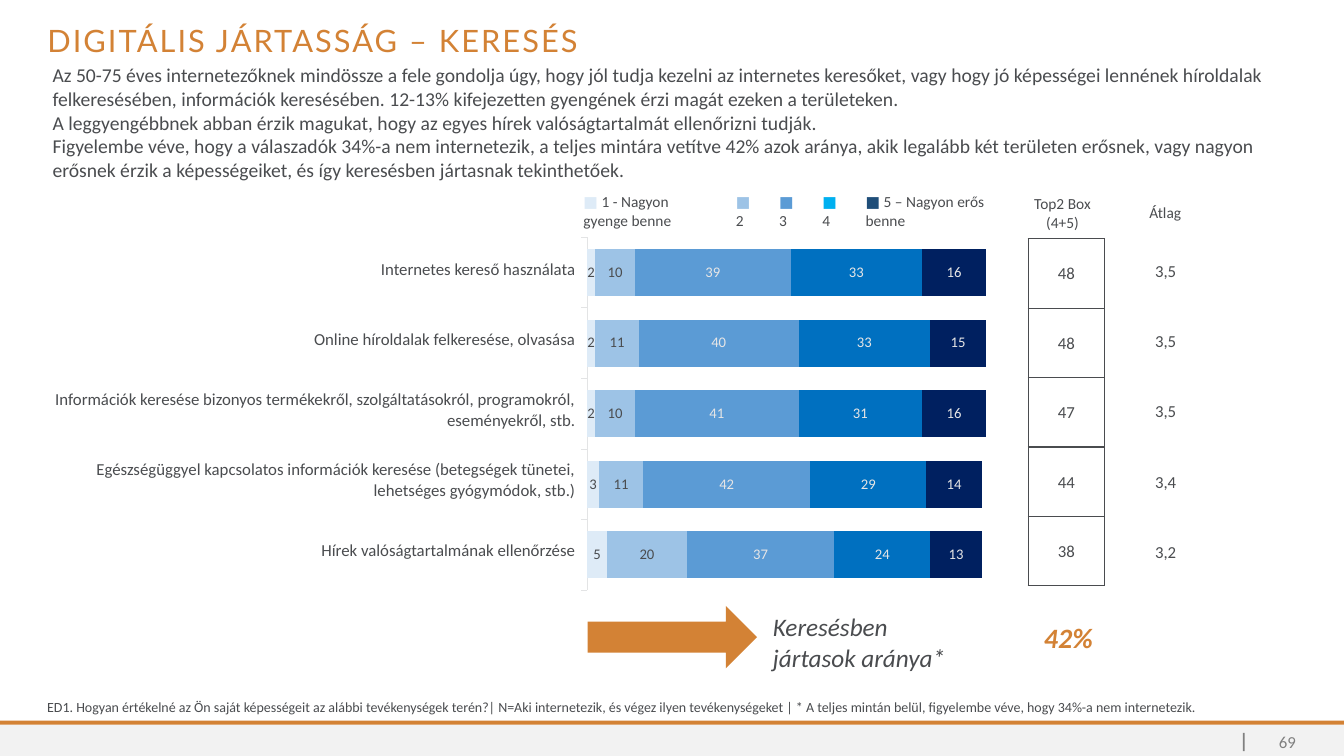
from lxml.etree import SubElement
from pptx import Presentation
from pptx.chart.data import CategoryChartData
from pptx.dml.color import RGBColor
from pptx.enum.chart import XL_CHART_TYPE, XL_TICK_LABEL_POSITION, XL_TICK_MARK
from pptx.enum.shapes import MSO_SHAPE
from pptx.enum.text import MSO_ANCHOR, MSO_AUTO_SIZE, PP_ALIGN
from pptx.oxml.ns import qn
from pptx.util import Cm, Pt

LEFT, CENTER, RIGHT = PP_ALIGN.LEFT, PP_ALIGN.CENTER, PP_ALIGN.RIGHT
TOP, MIDDLE = MSO_ANCHOR.TOP, MSO_ANCHOR.MIDDLE
NO_FIT = MSO_AUTO_SIZE.NONE
RECTANGLE, RIGHT_ARROW = MSO_SHAPE.RECTANGLE, MSO_SHAPE.RIGHT_ARROW
BAR_STACKED = XL_CHART_TYPE.BAR_STACKED
NO_LABELS = XL_TICK_LABEL_POSITION.NONE
TICK_OUTSIDE, TICK_NONE = XL_TICK_MARK.OUTSIDE, XL_TICK_MARK.NONE

COLORS = {
    "ink": "4A4C4F", "accent": "D38235", "footer": "F2F2F2", "muted": "808080",
    "axis": "E3E4E5", "light": "E7E6E6",
    "bar1": "DEEBF7", "bar2": "9DC3E6", "bar3": "5B9BD5", "bar4": "0070C0", "bar5": "002060",
    "legend4": "00B0F0", "legend5": "1F4E79",
}


def rgb(name):
    return RGBColor.from_string(COLORS[name])


def write(frame, text, size=12, color="ink", font="Calibri", align=LEFT, bold=False,
          italic=False, tracking=None, line=1.0, square=None):
    for index, content in enumerate(text.split("\n")):
        paragraph = frame.add_paragraph() if index else frame.paragraphs[0]
        paragraph.alignment = align
        paragraph.line_spacing = line
        paragraph.space_before = Pt(0)
        pieces = [(content, color, bold)]
        if square:
            pieces.insert(0, ("■ ", square, True))
        for piece, piece_color, piece_bold in pieces:
            run = paragraph.add_run()
            run.text = piece
            run.font.name = font
            run.font.size = Pt(size)
            run.font.bold = piece_bold
            run.font.italic = italic
            run.font.color.rgb = rgb(piece_color)
            if tracking:
                run.font._element.set("spc", str(tracking))


class SlideBuilder:
    def __init__(self, slide):
        self.slide = slide
        self.shapes = slide.shapes

    def placeholder(self, holder, place, text, **style):
        holder.left, holder.top, holder.width, holder.height = map(Cm, place)
        frame = holder.text_frame
        frame.auto_size = NO_FIT
        frame.vertical_anchor = TOP
        write(frame, text, **style)
        for paragraph in frame.paragraphs:
            properties = paragraph._p.get_or_add_pPr()
            properties.set("marL", "0")
            properties.set("indent", "0")
            SubElement(properties, qn("a:buNone"))

    def text(self, place, text, anchor=TOP, **style):
        frame = self.shapes.add_textbox(*map(Cm, place)).text_frame
        frame.word_wrap = True
        frame.vertical_anchor = anchor
        write(frame, text, **style)

    def block(self, place, color, kind=RECTANGLE):
        block = self.shapes.add_shape(kind, *map(Cm, place))
        block.shadow.inherit = False
        block.fill.solid()
        block.fill.fore_color.rgb = rgb(color)
        block.line.fill.background()

    def table(self, left, top, widths, height, rows, tight=True, border=None, squares=(), **style):
        table = self.shapes.add_table(len(rows), len(widths), Cm(left), Cm(top),
                                      Cm(sum(widths)), Cm(height)).table
        table.first_row = table.horz_banding = False
        for column, width in zip(table.columns, widths):
            column.width = Cm(width)
        for row_index, row in enumerate(rows):
            for column_index, content in enumerate(row):
                cell = table.cell(row_index, column_index)
                cell.vertical_anchor = MIDDLE
                if tight:
                    cell.margin_left = cell.margin_right = cell.margin_top = Cm(0.03)
                    cell.margin_bottom = 0
                if border:
                    self.outline(cell, border)
                cell.fill.background()
                square = squares[column_index] if squares else None
                write(cell.text_frame, content, square=square, **style)

    def outline(self, cell, color):
        properties = cell._tc.get_or_add_tcPr()
        for side in ("lnL", "lnR", "lnT", "lnB"):
            edge = SubElement(properties, qn("a:" + side), w=str(Pt(1)))
            SubElement(SubElement(edge, qn("a:solidFill")), qn("a:srgbClr"), val=COLORS[color])

    def stacked_bars(self, place, categories, series, plot_area):
        data = CategoryChartData(number_format="0")
        data.categories = categories
        for name, values, _, _ in series:
            data.add_series(name, values)
        chart = self.shapes.add_chart(BAR_STACKED, *map(Cm, place), data).chart
        chart.has_legend = chart.has_title = False
        chart.font.name = "Calibri"
        chart.font.size = Pt(10.5)
        chart.font.color.rgb = rgb("ink")

        axis = chart.category_axis
        axis.reverse_order = True
        axis.tick_label_position = NO_LABELS
        axis.major_tick_mark, axis.minor_tick_mark = TICK_OUTSIDE, TICK_NONE
        axis.format.line.color.rgb = rgb("axis")
        axis.format.line.width = Pt(0.75)
        scale = chart.value_axis
        scale.minimum_scale, scale.maximum_scale, scale.major_unit = 0, 100, 20
        scale.has_major_gridlines = False
        scale.visible = False

        bars = chart.plots[0]
        bars.gap_width, bars.overlap = 50, 100
        bars.vary_by_categories = False
        for bar, (_, _, fill, label_color) in zip(bars.series, series):
            bar.format.fill.solid()
            bar.format.fill.fore_color.rgb = rgb(fill)
            labels = bar.data_labels
            labels.show_value = True
            labels.number_format, labels.number_format_is_linked = "0", False
            labels.font.name = "Calibri"
            labels.font.size = Pt(10.5)
            labels.font.color.rgb = rgb(label_color)

        area = chart._chartSpace.chart.plotArea
        for old in area.findall(qn("c:layout")):
            area.remove(old)
        layout = SubElement(area, qn("c:layout"))
        area.insert(0, layout)
        manual = SubElement(layout, qn("c:manualLayout"))
        settings = [("layoutTarget", "inner"), ("xMode", "edge"), ("yMode", "edge")]
        for tag, value in settings + list(zip("xywh", plot_area)):
            SubElement(manual, qn("c:" + tag), val=str(value))


def main():
    deck = Presentation()
    deck.slide_width, deck.slide_height = Cm(33.87), Cm(19.05)
    page = SlideBuilder(deck.slides.add_slide(deck.slide_layouts[1]))

    page.block((0, 18.26, 33.87, 0.79), "footer")
    page.block((0, 18.16, 33.87, 0.1), "accent")
    page.block((31.32, 18.47, 0.05, 0.46), "muted")
    page.text((31.72, 18.47, 1.19, 0.46), "69", anchor=MIDDLE, color="muted", align=RIGHT)

    page.placeholder(page.shapes.title, (0.94, 0.53, 32, 1.17), "DIGITÁLIS JÁRTASSÁG – KERESÉS",
                     size=22, color="accent", font="Lato", tracking=150, line=0.9)
    page.placeholder(
        page.slide.placeholders[1], (1.07, 1.47, 31.88, 2.62),
        "Az 50-75 éves internetezőknek mindössze a fele gondolja úgy, hogy jól tudja kezelni az "
        "internetes keresőket, vagy hogy jó képességei lennének híroldalak felkeresésében, "
        "információk keresésében. 12-13% kifejezetten gyengének érzi magát ezeken a területeken.\n"
        "A leggyengébbnek abban érzik magukat, hogy az egyes hírek valóságtartalmát ellenőrizni "
        "tudják.\n"
        "Figyelembe véve, hogy a válaszadók 34%-a nem internetezik, a teljes mintára vetítve 42% "
        "azok aránya, akik legalább két területen erősnek, vagy nagyon erősnek érzik a "
        "képességeiket, és így keresésben jártasnak tekinthetőek.", size=14)

    skills = [
        "Internetes kereső használata",
        "Online híroldalak felkeresése, olvasása",
        "Információk keresése bizonyos termékekről, szolgáltatásokról, programokról, "
        "eseményekről, stb.",
        "Egészségüggyel kapcsolatos információk keresése (betegségek tünetei, lehetséges "
        "gyógymódok, stb.)",
        "Hírek valóságtartalmának ellenőrzése",
    ]
    page.table(0.94, 5.89, [13.59], 8.86, [[skill] for skill in skills], align=RIGHT)

    ratings = [
        ("1 - Nagyon gyenge benne", (2, 2, 2, 3, 5), "bar1", "ink"),
        ("2", (10, 11, 10, 11, 20), "bar2", "ink"),
        ("3", (39, 40, 41, 42, 37), "bar3", "light"),
        ("4", (33, 33, 31, 29, 24), "bar4", "light"),
        ("5 – Nagyon erős benne", (16, 15, 16, 14, 13), "bar5", "light"),
    ]
    page.stacked_bars((14.55, 5.97, 10.82, 9.19), skills, ratings, (0.023, 0, 0.929, 0.969))
    page.table(14.45, 4.72, [3.84, 1.09, 1.09, 1.09, 4.09], 1.19, [[name for name, *_ in ratings]],
               tight=False, squares=("bar1", "bar2", "bar3", "legend4", "legend5"), size=11)

    page.table(25.48, 4.78, [2.59, 2.59], 1.19, [["Top2 Box\n(4+5)", "Átlag"]],
               tight=False, size=11, align=CENTER)
    page.table(25.91, 6.02, [1.93], 8.74, [[share] for share in ("48", "48", "47", "44", "38")],
               border="ink", align=CENTER)
    page.table(28.65, 5.94, [1.45], 8.86,
               [[mean] for mean in ("3,5", "3,5", "3,5", "3,4", "3,2")], align=CENTER)

    page.block((14.81, 15.27, 4.27, 1.57), "accent", RIGHT_ARROW)
    page.text((19.23, 15.29, 5.31, 1.8), "Keresésben jártasok aránya*", size=18, italic=True)
    page.text((25.91, 15.52, 2.03, 1.12), "42%", size=20, color="accent", align=CENTER,
              bold=True, italic=True)
    page.text((0.94, 17.48, 32, 0.69),
              "ED1. Hogyan értékelné az Ön saját képességeit az alábbi tevékenységek terén?| "
              "N=Aki internetezik, és végez ilyen tevékenységeket | * A teljes mintán belül, "
              "figyelembe véve, hogy 34%-a nem internetezik.", size=10)
    deck.save("out.pptx")


if __name__ == "__main__":
    main()
